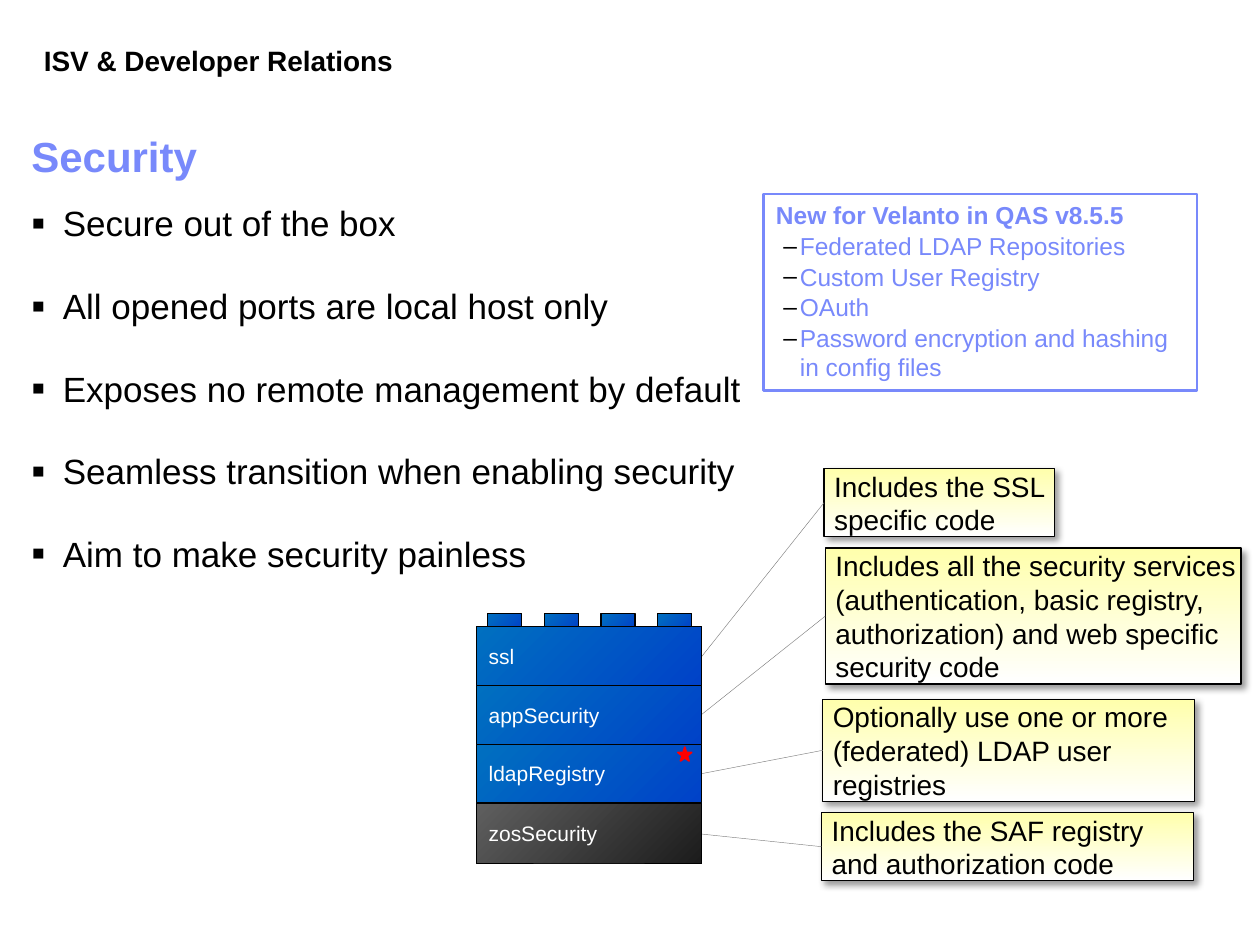
"""Build the Security slide: key points, a news box and a stack of annotated feature bricks."""
from dataclasses import dataclass

from lxml import etree
from pptx import Presentation
from pptx import util as u
from pptx.dml.color import RGBColor
from pptx.enum import shapes, text
from pptx.oxml.ns import qn

BLACK, WHITE, RED, GRAY, PERIWINKLE = "000000", "FFFFFF", "FF0000", "808080", "7889FB"
BLUE_FADE, DARK_FADE, NOTE_FADE = ("0070C0", "0042C8"), ("5F5F5F", "1C1C1C"), ("FFFFAC", "FFFFFF")
STUD_COUNT, STUD_PITCH, STUD_INSET, STUD_RISE = 4, 0.45, 0.09, 0.1
BRICK_LEFT, BRICK_WIDTH, BRICK_HEIGHT = 3.78, 1.79, 0.47


@dataclass(frozen=True)
class Brick:
    label: str
    top: float
    fade: tuple[str, str] = BLUE_FADE
    starred: bool = False


@dataclass(frozen=True)
class Note:
    wording: str
    left: float
    top: float
    width: float
    height: float
    target_y: float


BRICKS = [
    Brick("zosSecurity", 6.38, DARK_FADE),
    Brick("ldapRegistry", 5.9, starred=True),
    Brick("appSecurity", 5.44),
    Brick("ssl", 4.97),
]
NOTES = [
    Note("Includes the SSL specific code", 6.54, 3.72, 1.83, 0.54, 5.21),
    Note("Includes all the security services (authentication, basic registry, "
         "authorization) and web specific security code", 6.55, 4.35, 3.3, 1.08, 5.67),
    Note("Optionally use one or more (federated) LDAP user registries",
         6.53, 5.55, 2.95, 0.81, 6.14),
    Note("Includes the SAF registry and authorization code", 6.52, 6.45, 2.95, 0.54, 6.62),
]
POINTS = [
    "Secure out of the box",
    "All opened ports are local host only",
    "Exposes no remote management by default",
    "Seamless transition when enabling security",
    "Aim to make security painless",
]
NEWS = [
    "Federated LDAP Repositories",
    "Custom User Registry",
    "OAuth",
    "Password encryption and hashing in config files",
]


def color(value: str) -> RGBColor:
    return RGBColor.from_string(value)


def add_box(parent, left: float, top: float, width: float, height: float, *, fade=None,
            angle=45, fill=None, line=None, weight=0.75, kind=shapes.MSO_SHAPE.RECTANGLE):
    shape = parent.add_shape(kind, u.Inches(left), u.Inches(top), u.Inches(width), u.Inches(height))
    shape.shadow.inherit = False
    if fade:
        shape.fill.gradient()
        shape.fill.gradient_angle = 360 - angle
        for stop, value in zip(shape.fill.gradient_stops, fade):
            stop.color.rgb = color(value)
    elif fill:
        shape.fill.solid()
        shape.fill.fore_color.rgb = color(fill)
    else:
        shape.fill.background()
    if line:
        shape.line.color.rgb = color(line)
        shape.line.width = u.Pt(weight)
    else:
        shape.line.fill.background()
    frame = shape.text_frame
    frame.word_wrap = True
    frame.vertical_anchor = text.MSO_ANCHOR.MIDDLE
    return shape


def write(frame, wording: str, *, size, ink=BLACK, bold=False, first=True, before=0, after=0,
          spacing=None, margin=0.0, indent=0.0, bullet=None, bullet_percent=100):
    paragraph = frame.paragraphs[0] if first else frame.add_paragraph()
    paragraph.alignment = text.PP_ALIGN.LEFT
    paragraph.space_before = u.Pt(0 if first else before)
    paragraph.space_after = u.Pt(after)
    if spacing:
        paragraph.line_spacing = spacing
    properties = paragraph._p.get_or_add_pPr()
    properties.set("marL", str(u.Inches(margin)))
    properties.set("indent", str(u.Inches(indent)))
    if bullet:
        bullet_color = etree.SubElement(properties, qn("a:buClr"))
        etree.SubElement(bullet_color, qn("a:srgbClr"), val=BLACK)
        etree.SubElement(properties, qn("a:buSzPct"), val=str(bullet_percent * 1000))
        etree.SubElement(properties, qn("a:buFont"), typeface="Arial")
        etree.SubElement(properties, qn("a:buChar"), char=bullet)
    run = paragraph.add_run()
    run.text = wording
    run.font.name = "Arial"
    run.font.size = u.Pt(size)
    run.font.bold = bold
    run.font.color.rgb = color(ink)


def add_drop_shadow(shape) -> None:
    effects = shape._element.spPr.find(qn("a:effectLst"))
    shadow = etree.SubElement(effects, qn("a:outerShdw"), blurRad=str(u.Pt(4)), dist=str(u.Pt(3)),
                              dir="2700000", algn="tl", rotWithShape="0")
    shade = etree.SubElement(shadow, qn("a:srgbClr"), val=BLACK)
    etree.SubElement(shade, qn("a:alpha"), val="40000")


def add_note(slide, note: Note) -> None:
    shape = add_box(slide.shapes, note.left, note.top, note.width, note.height,
                    fade=NOTE_FADE, angle=90, line=BLACK)
    add_drop_shadow(shape)
    frame = shape.text_frame
    frame.margin_left = u.Inches(0.08)
    frame.margin_right = frame.margin_top = frame.margin_bottom = 0
    write(frame, note.wording, size=16, after=3)
    leader = slide.shapes.add_connector(
        shapes.MSO_CONNECTOR.STRAIGHT, u.Inches(note.left), u.Inches(note.top + note.height / 2),
        u.Inches(BRICK_LEFT + BRICK_WIDTH), u.Inches(note.target_y))
    leader.line.color.rgb = color(GRAY)
    leader.line.width = u.Pt(0.25)
    etree.SubElement(leader._element.spPr, qn("a:effectLst"))


def add_brick(slide, brick: Brick) -> None:
    parts = slide.shapes.add_group_shape().shapes
    for index in range(STUD_COUNT):
        add_box(parts, BRICK_LEFT + STUD_INSET + index * STUD_PITCH, brick.top - STUD_RISE,
                0.27, 0.12, fade=brick.fade, line=BLACK)
    body = add_box(parts, BRICK_LEFT, brick.top, BRICK_WIDTH, BRICK_HEIGHT,
                   fade=brick.fade, line=BLACK, weight=0.5)
    write(body.text_frame, brick.label, size=12, ink=WHITE)
    if brick.starred:
        add_box(parts, BRICK_LEFT + 1.6, brick.top + 0.03, 0.11, 0.11, fill=RED, line=RED,
                weight=1, kind=shapes.MSO_SHAPE.STAR_5_POINT)


def add_text_box(slide, left: float, top: float, width: float, height: float,
                 anchor=text.MSO_ANCHOR.TOP):
    shape = slide.shapes.add_textbox(u.Inches(left), u.Inches(top), u.Inches(width), u.Inches(height))
    shape.text_frame.word_wrap = True
    shape.text_frame.vertical_anchor = anchor
    return shape.text_frame


def main() -> None:
    presentation = Presentation()
    presentation.slide_width, presentation.slide_height = u.Inches(10), u.Inches(7.5)
    slide = presentation.slides.add_slide(presentation.slide_layouts[6])

    header = add_text_box(slide, 0.25, 0.3, 4.25, 0.37)
    write(header, "ISV & Developer Relations", size=16, bold=True)
    title = add_text_box(slide, 0.15, 1.01, 9.42, 0.5, text.MSO_ANCHOR.MIDDLE)
    write(title, "Security", size=24, ink=PERIWINKLE, bold=True, spacing=0.9)
    body = add_text_box(slide, 0.15, 1.37, 9.39, 5.5)
    for index, point in enumerate(POINTS):
        write(body, point, size=20, first=index == 0, before=7, after=3, spacing=u.Pt(37.2),
              margin=0.25, indent=-0.25, bullet="▪", bullet_percent=114)

    for note in NOTES:
        add_note(slide, note)
    for brick in BRICKS:
        add_brick(slide, brick)

    news = add_box(slide.shapes, 6.06, 1.54, 3.44, 1.56, line=PERIWINKLE, weight=1.5).text_frame
    news.vertical_anchor = text.MSO_ANCHOR.TOP
    write(news, "New for Velanto in QAS v8.5.5", size=14, ink=PERIWINKLE, bold=True)
    for item in NEWS:
        write(news, item, size=14, ink=PERIWINKLE, first=False, before=0.7,
              margin=0.19, indent=-0.13, bullet="‒")

    presentation.save("out.pptx")


if __name__ == "__main__":
    main()
